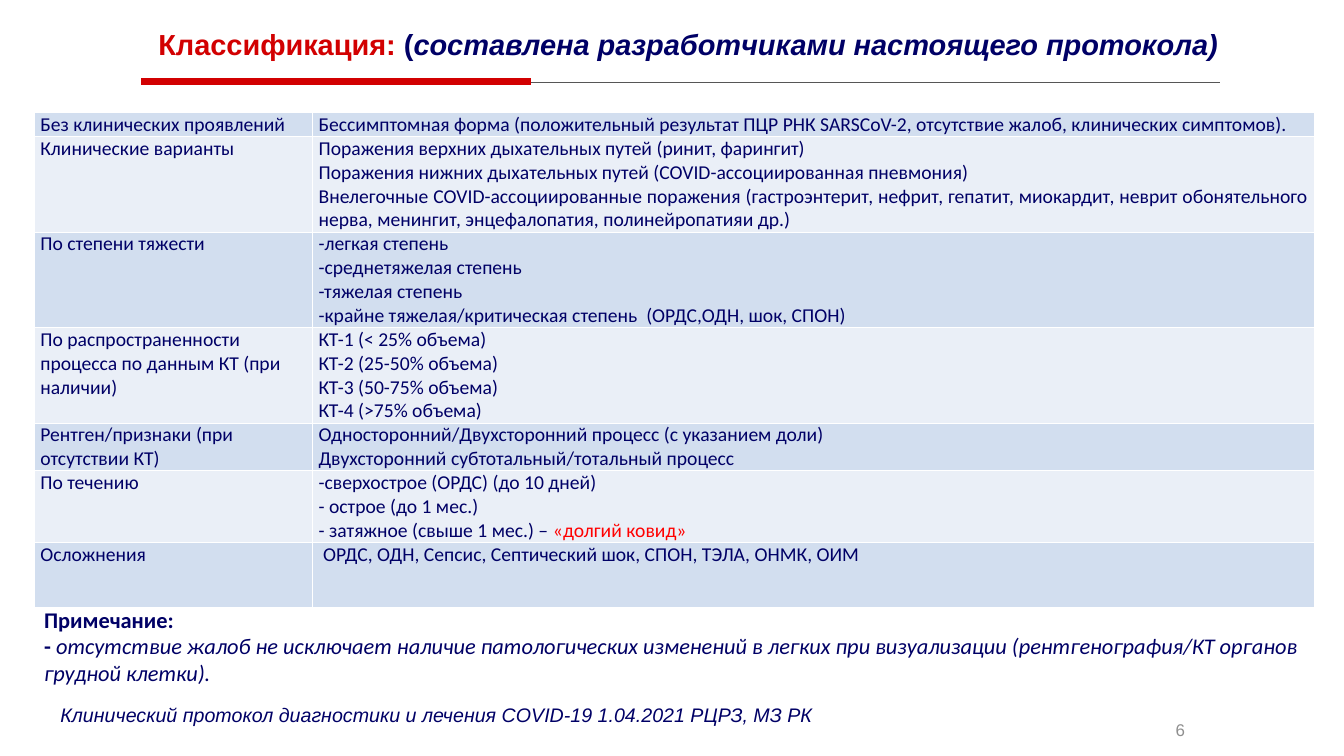
from lxml import etree
from pptx import Presentation
from pptx.dml.color import RGBColor
from pptx.enum.shapes import MSO_CONNECTOR
from pptx.enum.text import MSO_ANCHOR, MSO_AUTO_SIZE, PP_ALIGN
from pptx.oxml.ns import qn
from pptx.util import Inches, Pt

STRAIGHT = MSO_CONNECTOR.STRAIGHT
TOP, MIDDLE = MSO_ANCHOR.TOP, MSO_ANCHOR.MIDDLE
LEFT, JUSTIFY = PP_ALIGN.LEFT, PP_ALIGN.JUSTIFY
NO_FIT = MSO_AUTO_SIZE.NONE

NAVY, RED, BRIGHT_RED = "000066", "D20001", "FF0000"
RULE_GREY, NUMBER_GREY = "565656", "8F8F8F"
BANDS = ("D2DEEF", "EAEFF7")
LINE_H = 0.235  # one line of 14 pt text, inches

# Each row: heading, lines of the right cell, height in lines, alignment
ROWS = [
    ("Без клинических проявлений",
     ["Бессимптомная форма (положительный результат ПЦР РНК SARSCoV-2, "
      "отсутствие жалоб, клинических симптомов)."], 1, JUSTIFY),
    ("Клинические варианты",
     ["Поражения верхних дыхательных путей (ринит, фарингит)",
      "Поражения нижних дыхательных путей (COVID-ассоциированная пневмония)",
      "Внелегочные COVID-ассоциированные поражения (гастроэнтерит, нефрит, "
      "гепатит, миокардит, неврит обонятельного нерва, менингит, "
      "энцефалопатия, полинейропатияи др.)"], 4, JUSTIFY),
    ("По степени тяжести",
     ["-легкая степень", "-среднетяжелая степень", "-тяжелая степень",
      "-крайне тяжелая/критическая степень  (ОРДС,ОДН, шок, СПОН)"], 4, LEFT),
    ("По распространенности процесса по данным КТ (при наличии)",
     ["КТ-1 (< 25% объема)", "КТ-2 (25-50% объема)",
      "КТ-3 (50-75% объема)", "КТ-4 (>75% объема)"], 4, LEFT),
    ("Рентген/признаки (при отсутствии КТ)",
     ["Односторонний/Двухсторонний процесс (с указанием доли)",
      "Двухсторонний субтотальный/тотальный процесс"], 2, LEFT),
    ("По течению",
     ["-сверхострое (ОРДС) (до 10 дней)", "- острое (до 1 мес.)",
      [("- затяжное (свыше 1 мес.) –", {}),
       (" «долгий ковид»", {"color": BRIGHT_RED})]], 3, LEFT),
    ("Осложнения",
     [" ОРДС, ОДН, Сепсис, Септический шок, СПОН, ТЭЛА, ОНМК, ОИМ"], 2.75, LEFT),
]


def rgb(color):
    return RGBColor.from_string(color)


def write(tf, lines, font, size, color=NAVY, align=LEFT):
    """Fill tf; a line is a string or a list of (text, format changes)."""
    for i, line in enumerate(lines):
        p = tf.paragraphs[0] if i == 0 else tf.add_paragraph()
        p.alignment = align
        for text, changes in [(line, {})] if isinstance(line, str) else line:
            r = p.add_run()
            r.text = text
            r.font.name, r.font.size = font, Pt(size)
            r.font.bold = changes.get("bold", False)
            r.font.italic = changes.get("italic", False)
            r.font.color.rgb = rgb(changes.get("color", color))


def add_text(s, box, lines, font, size, color=NAVY, inset=(0.1, 0.05)):
    tf = s.shapes.add_textbox(*map(Inches, box)).text_frame
    tf.word_wrap = True
    tf.margin_left = tf.margin_right = Inches(inset[0])
    tf.margin_top = tf.margin_bottom = Inches(inset[1])
    write(tf, lines, font, size, color)


def add_rule(s, x, y, width, color, weight):
    line = s.shapes.add_connector(
        STRAIGHT, Inches(x), Inches(y), Inches(x + width), Inches(y))
    line.line.color.rgb = rgb(color)
    line.line.width = Pt(weight)
    etree.SubElement(line._element.spPr, qn("a:effectLst"))


def add_header(s, x, y, width):
    title = s.shapes.title
    title.left, title.top = Inches(x + 0.17), Inches(y)
    title.width, title.height = Inches(width + 0.6), Inches(0.45)
    tf = title.text_frame
    tf.auto_size, tf.vertical_anchor = NO_FIT, MIDDLE
    tf.margin_left = tf.margin_right = tf.margin_top = tf.margin_bottom = 0
    write(tf, [[("Классификация: ", {"bold": True, "color": RED}),
                ("(", {"bold": True}),
                ("составлена разработчиками настоящего протокола)",
                 {"bold": True, "italic": True})]], "Arial", 20.7)
    add_rule(s, x, y + 0.61, width, RULE_GREY, 0.75)
    add_rule(s, x, y + 0.6, 3.87, RED, 5.2)


def add_classification(s, x, y, widths):
    height = LINE_H * sum(row[2] for row in ROWS)
    table = s.shapes.add_table(
        len(ROWS), len(widths), Inches(x), Inches(y),
        Inches(sum(widths)), Inches(height)).table
    table.first_row = False
    for column, width in zip(table.columns, widths):
        column.width = Inches(width)
    for i, (heading, lines, count, align) in enumerate(ROWS):
        table.rows[i].height = Inches(LINE_H * count)
        for j, content in enumerate(([heading], lines)):
            cell = table.cell(i, j)
            cell.fill.solid()
            cell.fill.fore_color.rgb = rgb(BANDS[i % 2])
            cell.vertical_anchor = TOP
            cell.margin_left = cell.margin_right = Inches(0.06)
            cell.margin_top = cell.margin_bottom = 0
            write(cell.text_frame, content, "Calibri", 14,
                  align=align if j else LEFT)


def add_notes_and_footer(s, x, y, width):
    add_text(s, (x, y, width, 0.91), [
        [("Примечание:", {"bold": True})],
        [("- ", {"bold": True}),
         ("отсутствие жалоб не исключает наличие патологических изменений в "
          "легких при визуализации (рентгенография/КТ органов грудной клетки).",
          {"italic": True})]], "Calibri", 16)
    add_text(s, (x + 0.16, y + 0.96, 8.27, 0.34),
             [[("Клинический протокол диагностики и лечения COVID-19 "
                "1.04.2021 РЦРЗ, МЗ РК", {"italic": True})]], "Arial", 14)
    add_text(s, (x + 11.32, y + 1.18, 0.2, 0.2), ["6"], "Arial", 12.1,
             NUMBER_GREY, inset=(0, 0))


def main():
    prs = Presentation()
    prs.slide_width, prs.slide_height = Inches(13.33), Inches(7.5)
    s = prs.slides.add_slide(prs.slide_layouts[5])
    add_header(s, 1.4, 0.21, 10.7)
    add_classification(s, 0.34, 1.12, (2.76, 9.94))
    add_notes_and_footer(s, 0.34, 5.96, 12.7)
    prs.save("out.pptx")


if __name__ == "__main__":
    main()
